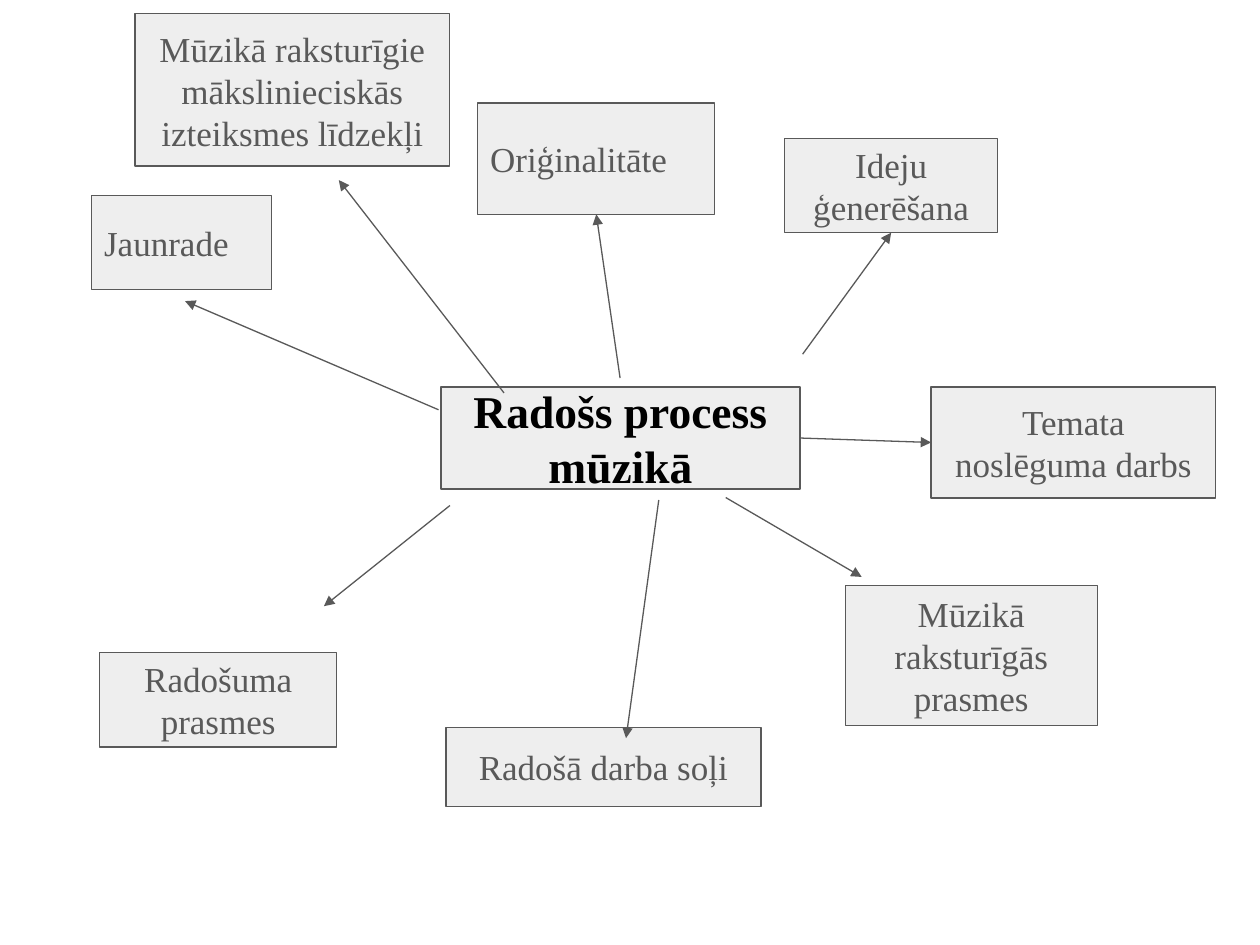
from lxml.etree import SubElement
from pptx import Presentation
from pptx.dml.color import RGBColor
from pptx.enum.shapes import MSO_CONNECTOR as LINK, MSO_SHAPE as FORM
from pptx.enum.text import MSO_ANCHOR as ANCHOR, PP_ALIGN as ALIGN
from pptx.oxml.ns import qn
from pptx.util import Cm, Pt

GREY = RGBColor(0x59, 0x59, 0x59)
PALE = RGBColor(0xEE, 0xEE, 0xEE)
BLACK = RGBColor(0, 0, 0)
FONT = "Times New Roman"
TOP, LEFT, BOTTOM, RIGHT = range(4)

deck = Presentation()
deck.slide_width, deck.slide_height = Cm(25.4), Cm(19.05)
slide = deck.slides.add_slide(deck.slide_layouts[6])

# Boxes: name, text, left, top, width, height, alignment
items = [
    ("new", "Jaunrade", 1.85, 3.94, 3.63, 1.9, ALIGN.LEFT),
    ("ideas", "Ideju ģenerēšana", 15.82, 2.79, 4.29, 1.9, ALIGN.CENTER),
    ("skills", "Radošuma prasmes", 2.01, 13.16, 4.78, 1.9, ALIGN.CENTER),
    ("music", "Mūzikā raksturīgās prasmes", 17.04, 11.81, 5.08, 2.82, ALIGN.CENTER),
    ("final", "Temata noslēguma darbs", 18.77, 7.8, 5.74, 2.24, ALIGN.CENTER),
    ("fresh", "Oriģinalitāte", 9.63, 2.08, 4.78, 2.24, ALIGN.LEFT),
    ("steps", "Radošā darba soļi", 8.99, 14.66, 6.35, 1.6, ALIGN.CENTER),
    ("means", "Mūzikā raksturīgie mākslinieciskās izteiksmes līdzekļi",
     2.72, 0.28, 6.35, 3.07, ALIGN.CENTER),
    ("core", "Radošs process mūzikā", 8.89, 7.8, 7.24, 2.06, ALIGN.CENTER),
]
boxes = {}
for name, text, x, y, wide, high, align in items:
    box = slide.shapes.add_shape(FORM.RECTANGLE, Cm(x), Cm(y), Cm(wide), Cm(high))
    box.shadow.inherit = False
    box.fill.solid()
    box.fill.fore_color.rgb = PALE
    box.line.color.rgb = GREY
    box.line.width = Pt(0.75)
    frame = box.text_frame
    frame.text = text
    frame.word_wrap = True
    frame.vertical_anchor = ANCHOR.MIDDLE
    frame.margin_left = frame.margin_right = Cm(0.25)
    frame.margin_top = frame.margin_bottom = Cm(0.25)
    para = frame.paragraphs[0]
    para.alignment = align
    font = para.runs[0].font
    font.name = FONT
    font.size = Pt(26 if name == "core" else 20)
    font.bold = name == "core"
    font.color.rgb = BLACK if name == "core" else GREY
    boxes[name] = box

# Arrows: start, end, joined start and joined end (box, side)
links = [
    ((12.5, 7.62), (12.02, 4.32), None, ("fresh", BOTTOM)),
    ((9.07, 10.19), (6.53, 12.22), None, None),
    ((16.18, 7.14), (17.96, 4.69), None, ("ideas", BOTTOM)),
    ((8.84, 8.26), (3.73, 6.07), None, None),
    ((14.63, 10.03), (17.37, 11.63), None, None),
    ((13.28, 10.08), (12.62, 14.88), None, None),
    ((10.16, 7.92), (6.83, 3.63), None, None),
    ((16.13, 8.83), (18.77, 8.92), ("core", RIGHT), ("final", LEFT)),
]
for start, end, tail, head in links:
    line = slide.shapes.add_connector(LINK.STRAIGHT, *map(Cm, start + end))
    line.line.color.rgb = GREY
    line.line.width = Pt(0.75)
    if tail:
        line.begin_connect(boxes[tail[0]], tail[1])
    if head:
        line.end_connect(boxes[head[0]], head[1])
    SubElement(line.line._get_or_add_ln(), qn("a:tailEnd"), type="triangle")
    SubElement(line._element.spPr, qn("a:effectLst"))

deck.save("out.pptx")
